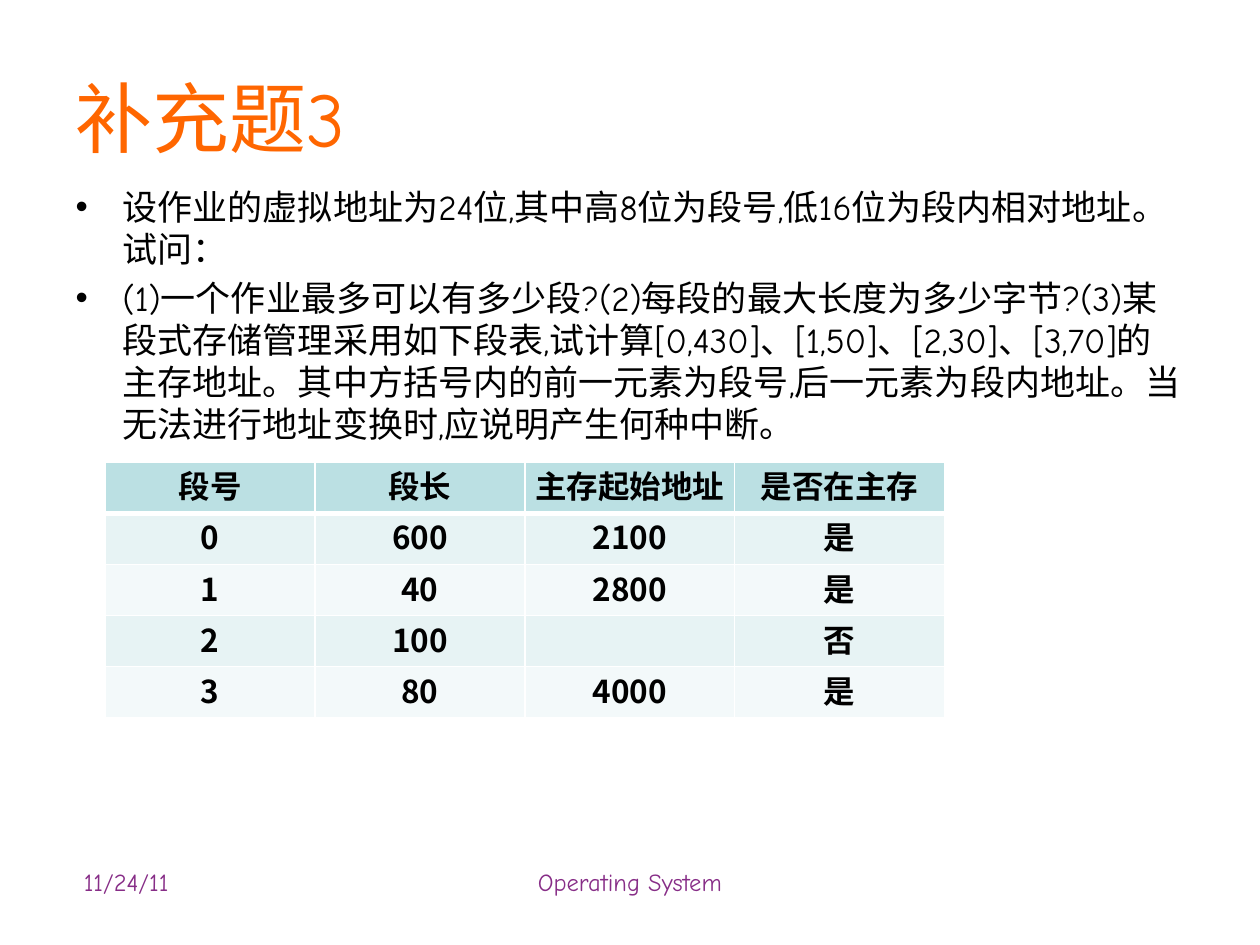
from dataclasses import dataclass

from pptx import Presentation
from pptx.dml.color import RGBColor as Rgb
from pptx.enum.text import MSO_ANCHOR as Anchor, MSO_AUTO_SIZE as AutoSize, PP_ALIGN as Align
from pptx.oxml.ns import qn
from pptx.oxml.xmlchemy import OxmlElement as Element
from pptx.util import Cm, Pt


@dataclass(frozen=True)
class Theme:
    text_font: str = "Comic Neue"
    table_font: str = "Noto Sans CJK SC"
    title_size: int = 44
    body_size: int = 20
    table_size: int = 18
    footer_size: int = 14
    title_color: str = "FF6600"
    text_color: str = "000000"
    footer_color: str = "872D87"
    border_color: str = "FFFFFF"
    header_fill: str = "BBE0E3"
    row_fills: tuple = ("E7F3F4", "F3F9FA")


def write(frame, *lines, font, size, color, bold=False, align=Align.LEFT, gap=0, bullet=None, indent=0):
    for index, line in enumerate(lines):
        paragraph = frame.add_paragraph() if index else frame.paragraphs[0]
        paragraph.alignment = align
        paragraph.space_before = Pt(gap if index else 0)
        if bullet:
            properties = paragraph._p.get_or_add_pPr()
            properties.set("marL", str(Cm(indent)))
            properties.set("indent", str(-Cm(indent)))
            mark = Element("a:buChar")
            mark.set("char", bullet)
            properties.append(mark)
        run = paragraph.add_run()
        run.text = line
        run.font.name, run.font.size, run.font.bold = font, Pt(size), bold
        run.font.color.rgb = Rgb.from_string(color)
        east_asian = Element("a:ea")
        east_asian.set("typeface", font)
        run.font._element.find(qn("a:latin")).addnext(east_asian)


def draw_border(cell, side, color, width):
    line = Element(f"a:{side}")
    line.set("w", str(Pt(width)))
    fill = Element("a:solidFill")
    shade = Element("a:srgbClr")
    shade.set("val", color)
    fill.append(shade)
    line.append(fill)
    cell._tc.get_or_add_tcPr().append(line)


class SlideBuilder:
    def __init__(self, presentation, theme):
        self.theme = theme
        self.slide = presentation.slides.add_slide(presentation.slide_layouts[1])

    def place(self, shape, left, top, width, height, anchor):
        shape.left, shape.top, shape.width, shape.height = map(Cm, (left, top, width, height))
        frame = shape.text_frame
        frame.word_wrap = True
        frame.auto_size = AutoSize.NONE
        frame.vertical_anchor = anchor
        return frame

    def title(self, text, *box):
        frame = self.place(self.slide.shapes.title, *box, Anchor.MIDDLE)
        write(frame, text, font=self.theme.text_font, size=self.theme.title_size,
              color=self.theme.title_color)

    def bullets(self, lines, *box):
        frame = self.place(self.slide.placeholders[1], *box, Anchor.TOP)
        write(frame, *lines, font=self.theme.text_font, size=self.theme.body_size,
              color=self.theme.text_color, gap=4, bullet="•", indent=0.95)

    def footer(self, text, *box, align=Align.LEFT, inset=0.25):
        frame = self.place(self.slide.shapes.add_textbox(0, 0, 0, 0), *box, Anchor.TOP)
        frame.margin_left = Cm(inset)
        write(frame, text, font=self.theme.text_font, size=self.theme.footer_size,
              color=self.theme.footer_color, align=align)

    def table(self, rows, left, top, column_width, row_height):
        theme = self.theme
        columns = len(rows[0])
        table = self.slide.shapes.add_table(
            len(rows), columns, Cm(left), Cm(top),
            Cm(column_width * columns), Cm(row_height * len(rows))).table
        for column in table.columns:
            column.width = Cm(column_width)
        for r, row in enumerate(rows):
            table.rows[r].height = Cm(row_height)
            for c, value in enumerate(row):
                cell = table.cell(r, c)
                cell.margin_left = cell.margin_right = Cm(0.18)
                cell.margin_top = cell.margin_bottom = 0
                for side in ("lnL", "lnR", "lnT", "lnB"):
                    header_edge = (r, side) in ((0, "lnB"), (1, "lnT"))
                    draw_border(cell, side, theme.border_color, 3 if header_edge else 1)
                cell.fill.solid()
                shade = theme.row_fills[(r - 1) % 2] if r else theme.header_fill
                cell.fill.fore_color.rgb = Rgb.from_string(shade)
                write(cell.text_frame, value, font=theme.table_font, size=theme.table_size,
                      color=theme.text_color, bold=True, align=Align.CENTER)


def main():
    presentation = Presentation()
    presentation.slide_width, presentation.slide_height = Cm(25.4), Cm(19.05)
    builder = SlideBuilder(presentation, Theme())

    footer_top, footer_height = 17.35, 1.32
    builder.footer("11/24/11", 1.27, footer_top, 5.93, footer_height, inset=0.42)
    builder.footer("Operating System", 8.68, footer_top, 8.04, footer_height, align=Align.CENTER)

    builder.title("补充题3", 1.27, 0.76, 22.86, 3.18)
    questions = [
        "设作业的虚拟地址为24位,其中高8位为段号,低16位为段内相对地址。试问：",
        "(1)一个作业最多可以有多少段?(2)每段的最大长度为多少字节?"
        "(3)某段式存储管理采用如下段表,试计算[0,430]、[1,50]、[2,30]、[3,70]的主存地址。"
        "其中方括号内的前一元素为段号,后一元素为段内地址。"
        "当无法进行地址变换时,应说明产生何种中断。",
    ]
    builder.bullets(questions, 1.27, 3.61, 22.86, 12.57)

    segments = [
        ("段号", "段长", "主存起始地址", "是否在主存"),
        ("0", "600", "2100", "是"),
        ("1", "40", "2800", "是"),
        ("2", "100", "", "否"),
        ("3", "80", "4000", "是"),
    ]
    builder.table(segments, 2.12, 9.32, 4.23, 1.03)
    presentation.save("out.pptx")


if __name__ == "__main__":
    main()
